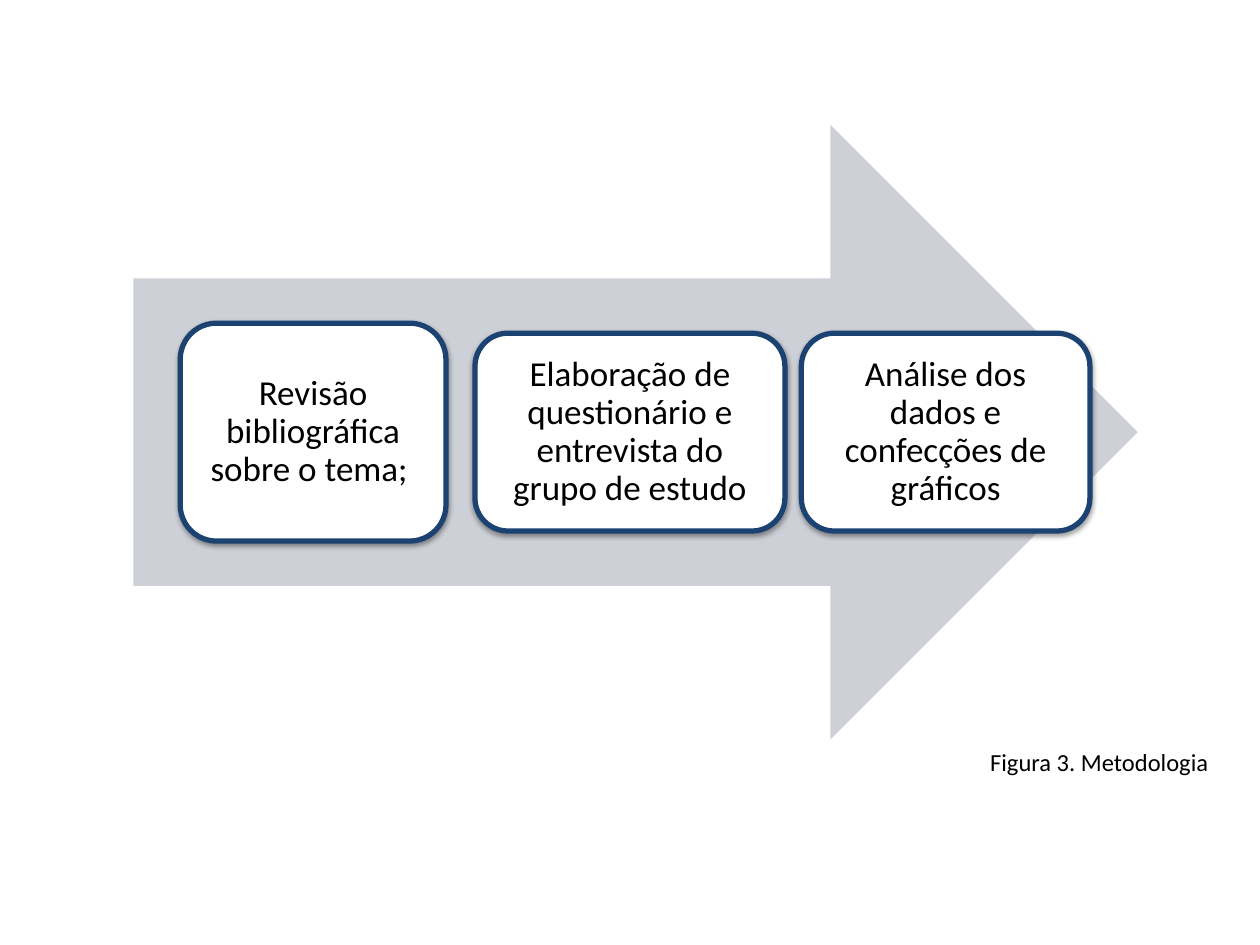
import pptx
import pptx.util
import pptx.dml.color
import pptx.enum.shapes
import pptx.enum.text
import pptx.oxml
import pptx.oxml.ns

Inches = pptx.util.Inches
Pt = pptx.util.Pt
RGBColor = pptx.dml.color.RGBColor
MSO_SHAPE = pptx.enum.shapes.MSO_SHAPE
PP_ALIGN = pptx.enum.text.PP_ALIGN
MSO_ANCHOR = pptx.enum.text.MSO_ANCHOR

BLACK = RGBColor(0x00, 0x00, 0x00)
WHITE = RGBColor(0xFF, 0xFF, 0xFF)
NAVY = RGBColor(0x1C, 0x42, 0x71)
PALE_GRAY = RGBColor(0xCD, 0xD0, 0xD7)

CARD_SHADOW = (
    f'<a:effectLst {pptx.oxml.ns.nsdecls("a")}>'
    '<a:outerShdw blurRad="40000" dist="20000" dir="5400000" rotWithShape="0">'
    '<a:srgbClr val="000000"><a:alpha val="38000"/></a:srgbClr>'
    '</a:outerShdw></a:effectLst>'
)

STEPS = [
    (0.37, 2.11, 1.73, "Revisão bibliográfica sobre o tema; "),
    (2.71, 2.46, 1.57, "Elaboração de questionário e entrevista do grupo de estudo"),
    (5.3, 2.29, 1.57, "Análise dos dados e confecções de gráficos"),
]


def write_text(frame, text, size, align=PP_ALIGN.LEFT, anchor=MSO_ANCHOR.TOP,
               line_spacing=1.0, inset=None):
    frame.word_wrap = True
    frame.vertical_anchor = anchor
    if inset is not None:
        frame.margin_left = frame.margin_right = Inches(inset)
        frame.margin_top = frame.margin_bottom = Inches(inset)
    paragraph = frame.paragraphs[0]
    paragraph.alignment = align
    paragraph.line_spacing = line_spacing
    run = paragraph.add_run()
    run.text = text
    run.font.name = "Calibri"
    run.font.size = Pt(size)
    run.font.color.rgb = BLACK


def add_step(slide, left, top, width, height, text):
    card = slide.shapes.add_shape(MSO_SHAPE.ROUNDED_RECTANGLE, Inches(left),
                                  Inches(top), Inches(width), Inches(height))
    card.fill.solid()
    card.fill.fore_color.rgb = WHITE
    card.line.color.rgb = NAVY
    card.line.width = Pt(3)
    card._element.spPr.append(pptx.oxml.parse_xml(CARD_SHADOW))
    write_text(card.text_frame, text, 20, align=PP_ALIGN.CENTER,
               anchor=MSO_ANCHOR.MIDDLE, line_spacing=0.9, inset=0.08)


def add_process(slide, left, top, width, height):
    arrow = slide.shapes.add_shape(MSO_SHAPE.RIGHT_ARROW, Inches(left),
                                   Inches(top), Inches(width), Inches(height))
    arrow.shadow.inherit = False
    arrow.fill.solid()
    arrow.fill.fore_color.rgb = PALE_GRAY
    arrow.line.fill.background()
    for offset, step_width, step_height, text in STEPS:
        step_top = top + (height - step_height) / 2
        add_step(slide, left + offset, step_top, step_width, step_height, text)


def add_caption(slide, left, top, width, height):
    caption = slide.shapes.add_textbox(Inches(left), Inches(top),
                                       Inches(width), Inches(height))
    write_text(caption.text_frame, "Figura 3. Metodologia", 14)
    caption.text_frame.auto_size = pptx.enum.text.MSO_AUTO_SIZE.SHAPE_TO_FIT_TEXT


def main():
    presentation = pptx.Presentation()
    presentation.slide_width = Inches(10)
    presentation.slide_height = Inches(7.5)
    slide = presentation.slides.add_slide(presentation.slide_layouts[6])
    add_process(slide, 1.06, 0.99, 7.97, 4.88)
    add_caption(slide, 7.76, 5.88, 2.44, 0.34)
    presentation.save("out.pptx")


if __name__ == "__main__":
    main()
